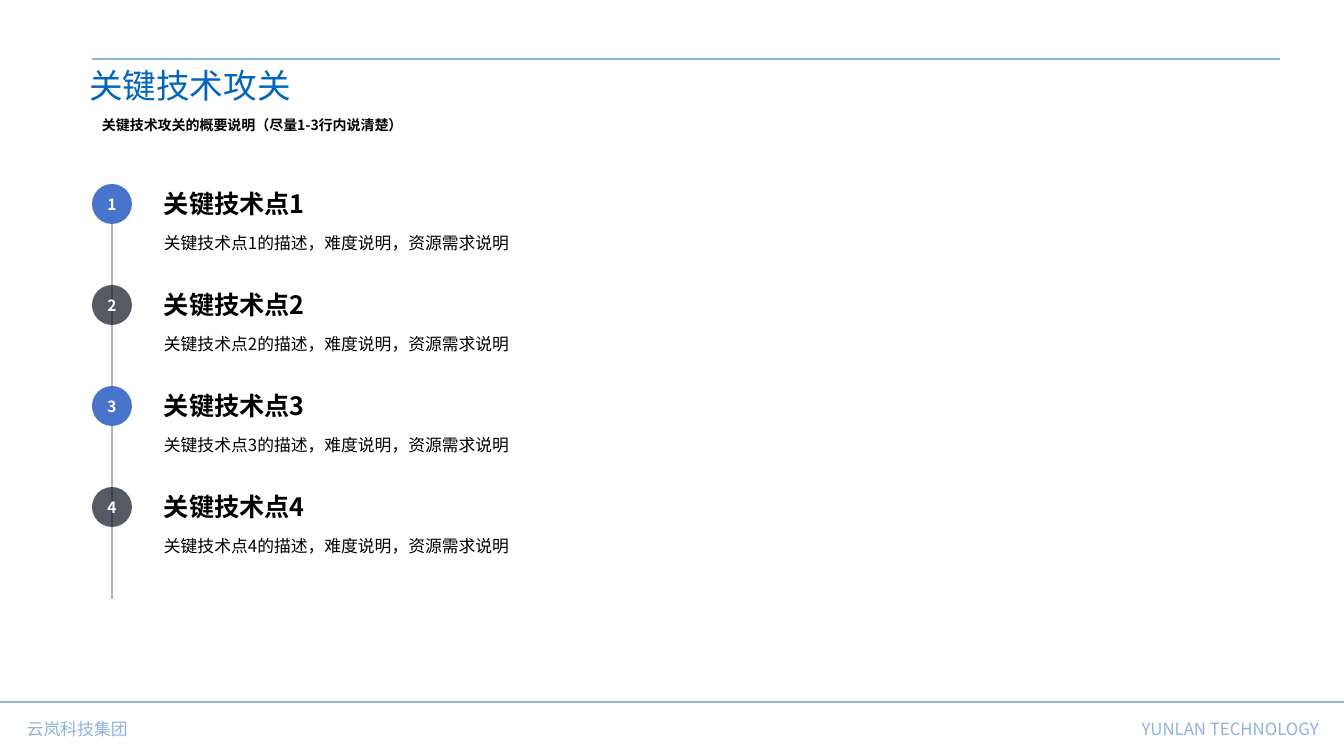
from lxml import etree
from pptx import Presentation
from pptx.dml.color import RGBColor
from pptx.enum.shapes import MSO_CONNECTOR, MSO_SHAPE
from pptx.enum.text import MSO_ANCHOR, MSO_AUTO_SIZE, PP_ALIGN
from pptx.oxml.ns import qn
from pptx.util import Emu, Pt

LEFT, CENTER, RIGHT = PP_ALIGN.LEFT, PP_ALIGN.CENTER, PP_ALIGN.RIGHT
TOP, MIDDLE, BOTTOM = MSO_ANCHOR.TOP, MSO_ANCHOR.MIDDLE, MSO_ANCHOR.BOTTOM
STRAIGHT, OVAL = MSO_CONNECTOR.STRAIGHT, MSO_SHAPE.OVAL

SCALE = 914400 / 100.8  # EMU per px
FONT = "Noto Sans CJK SC"
BLACK, WHITE, PALE_BLUE = "000000", "FFFFFF", "90B2DE"
TITLE_BLUE, BADGE_BLUE, DARK = "0065BB", "4874CB", "0F1423"


def paint(fill, color, opacity=100):
    fill.solid()
    fill.fore_color.rgb = RGBColor.from_string(color)
    if opacity < 100:
        tint = fill._xPr.find(".//" + qn("a:srgbClr"))
        etree.SubElement(tint, qn("a:alpha"), val=str(opacity * 1000))


def write(shape, place, text, size, color=BLACK, bold=False, align=LEFT, anchor=TOP):
    shape.left, shape.top, shape.width, shape.height = [Emu(round(v * SCALE)) for v in place]
    frame = shape.text_frame
    frame.word_wrap = True
    frame.auto_size = MSO_AUTO_SIZE.NONE
    frame.vertical_anchor = anchor
    para = frame.paragraphs[0]
    para.text = text
    para.alignment = align
    font = para.font
    font.name, font.size, font.bold = FONT, Pt(size), bold
    paint(font.fill, color)
    latin = para._p.find(".//" + qn("a:latin"))
    latin.addnext(latin.makeelement(qn("a:ea"), typeface=FONT))
    return para


deck = Presentation()
deck.slide_width = Emu(round(1344 * SCALE))
deck.slide_height = Emu(round(756 * SCALE))
page = deck.slides.add_slide(deck.slide_layouts[5])
shapes = page.shapes

# Title
write(shapes.title, (79, 60, 1124, 50), "关键技术攻关", 24, TITLE_BLUE)

# Footer
for place, text, align in [
    ((1046, 714, 283, 30), "YUNLAN TECHNOLOGY", RIGHT),
    ((17, 714, 380, 30), "云岚科技集团", LEFT),
]:
    write(shapes.add_textbox(0, 0, 0, 0), place, text, 12, PALE_BLUE, align=align)

# Footer rule, title rule and timeline
for ends, color, opacity in [
    ((-1, 702, 1347, 702), PALE_BLUE, 100),
    ((92, 59, 1280, 59), PALE_BLUE, 100),
    ((112, 187, 112, 599), DARK, 50),
]:
    rule = shapes.add_connector(STRAIGHT, *[Emu(round(v * SCALE)) for v in ends])
    rule.line.width = Pt(1)
    paint(rule.line.fill, color, opacity)
    etree.SubElement(rule._element.spPr, qn("a:effectLst"))

# Key technology points
for index in range(4):
    number = index + 1
    top = 184 + 101 * index
    heading = f"关键技术点{number}"
    point = shapes.add_group_shape().shapes

    badge = point.add_shape(OVAL, 0, 0, 0, 0)
    badge.shadow.inherit = False
    badge.line.fill.background()
    if index % 2:
        paint(badge.fill, DARK, 70)
    else:
        paint(badge.fill, BADGE_BLUE)
    write(badge, (92, top, 40, 40), str(number), 11, WHITE, True, CENTER, MIDDLE)
    frame = badge.text_frame
    frame.margin_left = frame.margin_right = frame.margin_top = frame.margin_bottom = 0

    write(point.add_textbox(0, 0, 0, 0), (154, top, 625, 40), heading, 18,
          bold=True, anchor=BOTTOM)
    detail = write(point.add_textbox(0, 0, 0, 0), (154, top + 40, 1126, 53),
                   f"{heading}的描述，难度说明，资源需求说明", 12)
    detail.line_spacing = 1.2

# Summary under the title
write(shapes.add_textbox(0, 0, 0, 0), (92, 112, 1187, 27),
      "关键技术攻关的概要说明（尽量1-3行内说清楚）", 10, bold=True)

# Groups take their extents from the placed members
for group in shapes:
    if group.shape_type is not None and hasattr(group, "shapes"):
        group._element.recalculate_extents()

deck.save("out.pptx")
